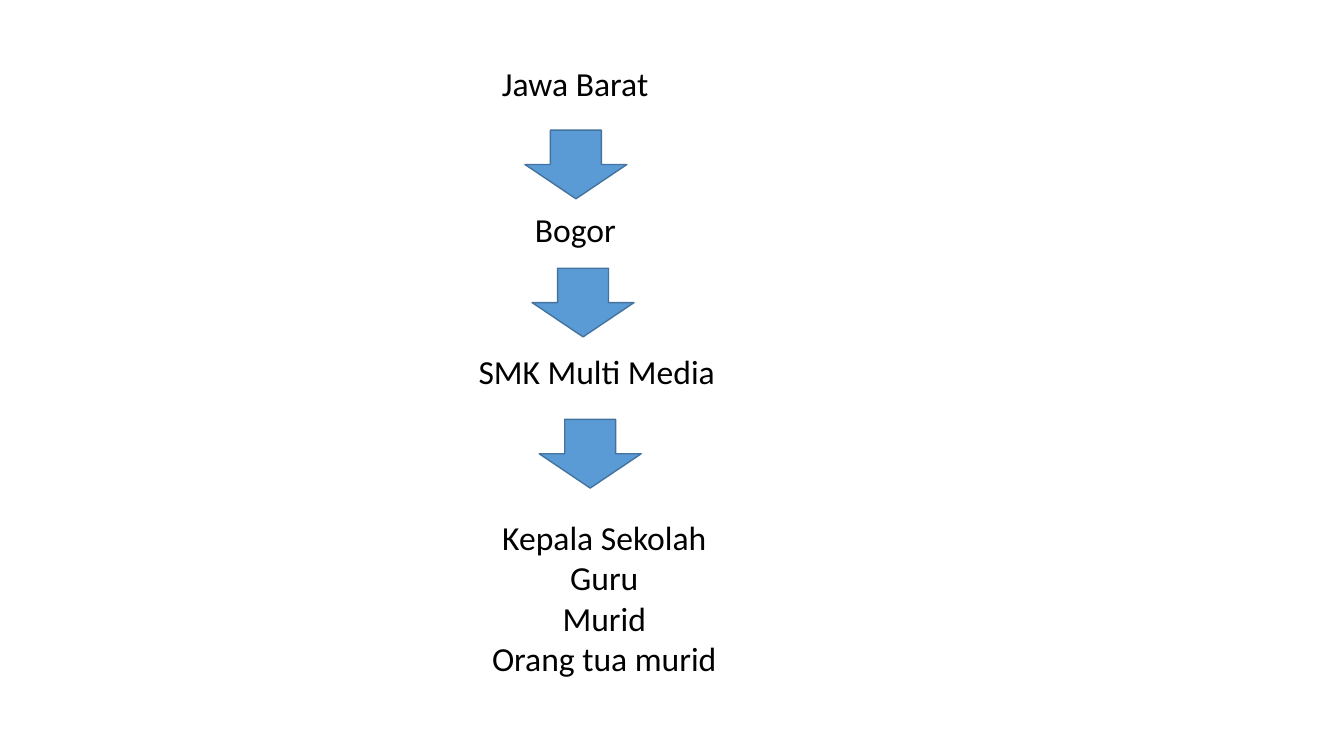
import pptx
import pptx.util
import pptx.dml.color
import pptx.enum.shapes
import pptx.enum.text
from pptx.util import Cm

LEVELS = [
    ("Jawa Barat", 12.4, 1.47, 4.57),
    ("Bogor", 13.23, 5.13, 5.84),
    ("SMK Multi Media", 11.81, 8.71, 7.95),
]
PEOPLE = ["Kepala Sekolah", "Guru", "Murid", "Orang tua murid"]
ARROW_TOPS = [3.28, 6.76, 10.57]
ARROW_LEFT, ARROW_STEP = 13.23, 0.18
ARROW_WIDTH, ARROW_HEIGHT = 2.57, 1.73

THEME = {
    "font": "Calibri",
    "size": 24,
    "text": "000000",
    "arrow": "5B9BD5",
    "outline": "43739E",
    "outline_width": 1,
}
ALIGN = pptx.enum.text.PP_ALIGN


def color(name):
    return pptx.dml.color.RGBColor.from_string(THEME[name])


def add_text(page, lines, left, top, width, height, align=ALIGN.LEFT):
    box = page.shapes.add_textbox(Cm(left), Cm(top), Cm(width), Cm(height))
    frame = box.text_frame
    frame.word_wrap = True
    frame.auto_size = pptx.enum.text.MSO_AUTO_SIZE.SHAPE_TO_FIT_TEXT
    for index, line in enumerate(lines):
        para = frame.add_paragraph() if index else frame.paragraphs[0]
        para.alignment = align
        span = para.add_run()
        span.text = line
        span.font.name = THEME["font"]
        span.font.size = pptx.util.Pt(THEME["size"])
        span.font.color.rgb = color("text")


def add_arrow(page, left, top):
    arrow = page.shapes.add_shape(
        pptx.enum.shapes.MSO_SHAPE.DOWN_ARROW,
        Cm(left), Cm(top), Cm(ARROW_WIDTH), Cm(ARROW_HEIGHT),
    )
    arrow.shadow.inherit = False
    arrow.fill.solid()
    arrow.fill.fore_color.rgb = color("arrow")
    arrow.line.color.rgb = color("outline")
    arrow.line.width = pptx.util.Pt(THEME["outline_width"])


def main():
    deck = pptx.Presentation()
    deck.slide_width, deck.slide_height = Cm(33.87), Cm(19.05)
    page = deck.slides.add_slide(deck.slide_layouts[6])
    for label, left, top, width in LEVELS:
        add_text(page, [label], left, top, width, 1.27)
    for index, top in enumerate(ARROW_TOPS):
        add_arrow(page, ARROW_LEFT + index * ARROW_STEP, top)
    add_text(page, PEOPLE, 10.11, 12.9, 10.24, 4.37, align=ALIGN.CENTER)
    deck.save("out.pptx")


if __name__ == "__main__":
    main()
